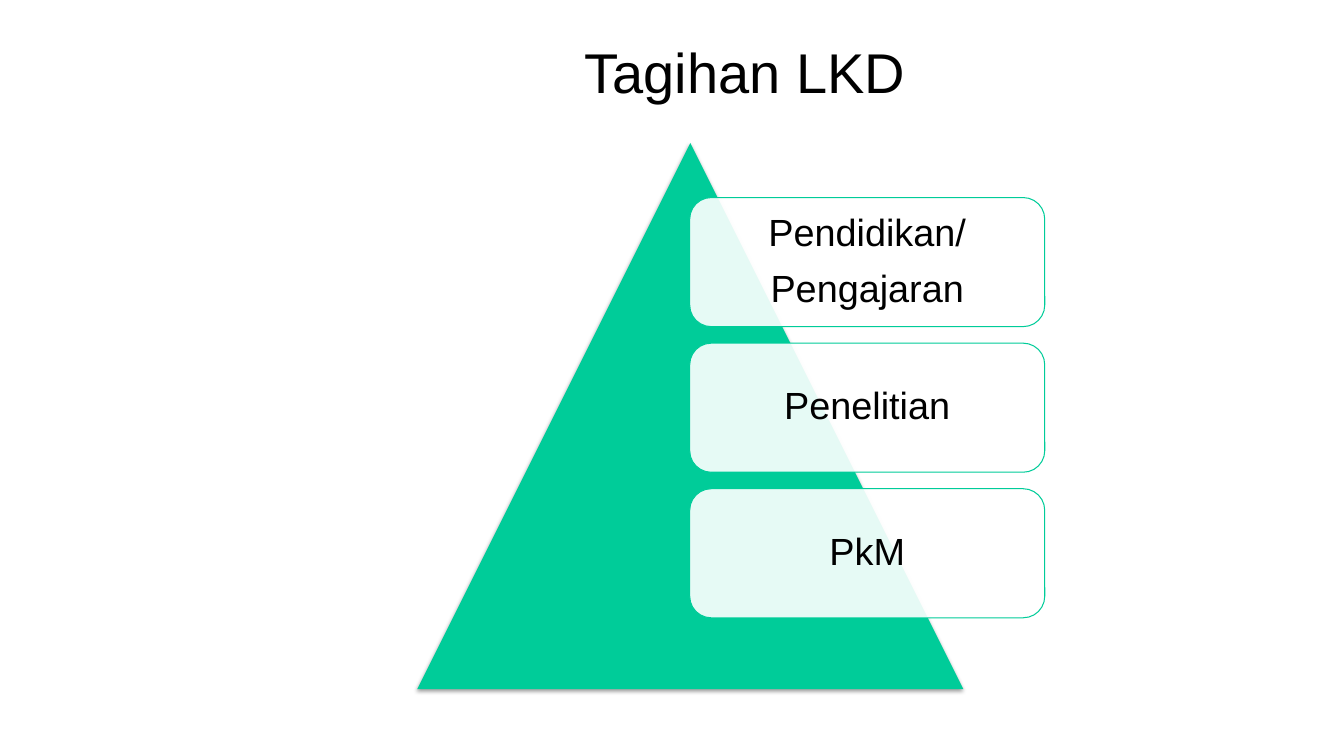
from lxml import etree
from pptx import Presentation
from pptx.dml.color import RGBColor
from pptx.enum import shapes, text
from pptx.oxml import ns
from pptx.util import Pt

COLORS = {"green": "00CC99", "white": "FFFFFF", "black": "000000"}
TITLE_FONT = {"name": "Arial", "size": Pt(40)}
CARD_FONT = {"name": "Arial", "size": Pt(27)}
CARD_PARAGRAPH = {"line_spacing": 0.9, "space_after": Pt(10.5)}
CARD_MARGINS = {f"margin_{side}": Pt(12.4)
                for side in ("left", "top", "right", "bottom")}

DUTIES = [["Pendidikan/", "Pengajaran"], ["Penelitian"], ["PkM"]]
CARD_LEFT, CARD_TOP, CARD_WIDTH, CARD_HEIGHT = 492.7, 141.1, 253.6, 92.2
CARD_PITCH = 104


def color(name):
    return RGBColor.from_string(COLORS[name])


def set_attributes(target, values):
    for name, value in values.items():
        setattr(target, name, value)


def add_element(parent, tag, **attributes):
    return etree.SubElement(parent, ns.qn(tag), attributes)


def write_paragraph(paragraph, wording, font, layout):
    paragraph.text = wording
    paragraph.alignment = text.PP_ALIGN.CENTER
    set_attributes(paragraph, layout)
    set_attributes(paragraph.font, font)
    paragraph.font.color.rgb = color("black")


def add_filled_shape(slide, kind, box, fill):
    shape = slide.shapes.add_shape(kind, *map(Pt, box))
    shape.shadow.inherit = False
    shape.fill.solid()
    shape.fill.fore_color.rgb = color(fill)
    return shape


def add_title(slide, wording):
    title = slide.shapes.title
    set_attributes(title, {"left": Pt(144), "top": Pt(18),
                           "width": Pt(776), "height": Pt(66)})
    frame = title.text_frame
    set_attributes(frame, {"auto_size": text.MSO_AUTO_SIZE.NONE,
                           "vertical_anchor": text.MSO_ANCHOR.MIDDLE})
    write_paragraph(frame.paragraphs[0], wording, TITLE_FONT, {})


def add_triangle(slide):
    triangle = add_filled_shape(slide, shapes.MSO_SHAPE.ISOSCELES_TRIANGLE,
                                (298, 102.1, 390.2, 390.2), "green")
    triangle.line.fill.background()
    # Soft shadow straight below
    effects = triangle._element.spPr.find(ns.qn("a:effectLst"))
    shadow = add_element(effects, "a:outerShdw", blurRad=str(Pt(3.1)),
                         dist=str(Pt(1.6)), dir="5400000", rotWithShape="0")
    black = add_element(shadow, "a:srgbClr", val=COLORS["black"])
    add_element(black, "a:alpha", val="38000")


def add_card(slide, top, lines):
    card = add_filled_shape(slide, shapes.MSO_SHAPE.ROUNDED_RECTANGLE,
                            (CARD_LEFT, top, CARD_WIDTH, CARD_HEIGHT), "white")
    fill = card._element.spPr.find(ns.qn("a:solidFill"))
    add_element(fill[0], "a:alpha", val="90000")
    card.line.color.rgb = color("green")
    card.line.width = Pt(0.75)

    frame = card.text_frame
    set_attributes(frame, CARD_MARGINS)
    set_attributes(frame, {"word_wrap": True,
                           "vertical_anchor": text.MSO_ANCHOR.MIDDLE})
    for index, line in enumerate(lines):
        paragraph = frame.add_paragraph() if index else frame.paragraphs[0]
        write_paragraph(paragraph, line, CARD_FONT, CARD_PARAGRAPH)


def main():
    presentation = Presentation()
    presentation.slide_width, presentation.slide_height = Pt(960), Pt(540)
    slide = presentation.slides.add_slide(presentation.slide_layouts[5])

    # Title
    add_title(slide, "Tagihan LKD")

    # Pyramid with a card for each duty
    add_triangle(slide)
    for index, lines in enumerate(DUTIES):
        add_card(slide, CARD_TOP + index * CARD_PITCH, lines)

    presentation.save("out.pptx")


if __name__ == "__main__":
    main()
